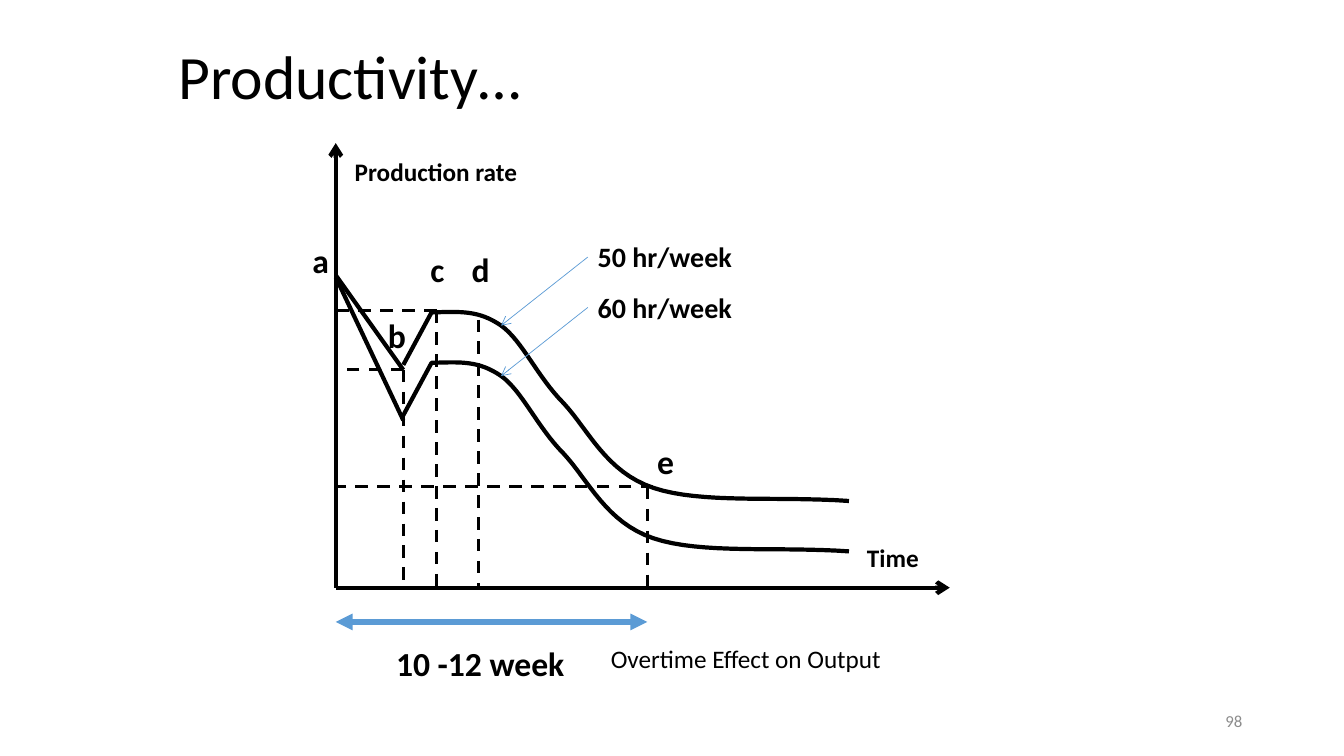
from dataclasses import dataclass

from pptx import Presentation
from pptx.dml.color import RGBColor
from pptx.enum.dml import MSO_LINE
from pptx.enum.shapes import MSO_CONNECTOR
from pptx.enum.text import MSO_ANCHOR as Anchor, PP_ALIGN as Align
from pptx.oxml.ns import qn
from pptx.util import Inches, Pt
from lxml.etree import SubElement


@dataclass(frozen=True)
class Theme:
    """Colours, font, type sizes and line widths of the slide."""
    font: str = "Calibri"
    ink: str = "000000"
    accent: str = "5B9BD5"
    muted: str = "8C8C8C"
    title: int = 44
    letter: int = 24
    series: int = 20
    body: int = 18
    number: int = 12
    heavy: float = 3
    guide: float = 2.25
    thin: float = 0.5
    span: float = 4


@dataclass(frozen=True)
class Box:
    """A region of the slide in inches."""
    left: float
    top: float
    width: float
    height: float

    def at(self, x, y):
        """Return the slide position of a point given within the box."""
        return self.left + x, self.top + y


THEME = Theme()
CURVE_START = (0.67, 2.2)
CURVE_KNEE = (0.95, 1.68)
CURVE_BENDS = [
    ((1.25, 1.67), (1.42, 1.66), (1.64, 1.81)),
    ((1.85, 1.96), (2.0, 2.32), (2.26, 2.58)),
    ((2.51, 2.85), (2.68, 3.26), (3.15, 3.42)),
    ((3.63, 3.58), (4.37, 3.5), (5.09, 3.55)),
]
BEND_STEPS = 16


def add_text(slide, text, box, size=THEME.body, color=THEME.ink, bold=False,
             align=Align.LEFT, anchor=Anchor.TOP, spacing=1.0):
    """Add a text box holding one formatted paragraph."""
    shape = slide.shapes.add_textbox(*map(Inches, (box.left, box.top, box.width, box.height)))
    frame = shape.text_frame
    frame.word_wrap = True
    frame.vertical_anchor = anchor
    paragraph = frame.paragraphs[0]
    paragraph.alignment = align
    paragraph.line_spacing = spacing
    run = paragraph.add_run()
    run.text = text
    run.font.name = THEME.font
    run.font.size = Pt(size)
    run.font.bold = bold
    run.font.color.rgb = RGBColor.from_string(color)
    return shape


def style_line(line, color, width):
    """Set the colour and width of a line."""
    line.color.rgb = RGBColor.from_string(color)
    line.width = Pt(width)


def add_line(slide, start, end, color=THEME.ink, width=THEME.heavy,
             dashed=False, head=None, tail=None):
    """Add a straight connector with optional dashes and arrowheads."""
    connector = slide.shapes.add_connector(
        MSO_CONNECTOR.STRAIGHT, *map(Inches, (*start, *end)))
    style_line(connector.line, color, width)
    if dashed:
        connector.line.dash_style = MSO_LINE.DASH
    properties = connector._element.spPr
    outline = properties.find(qn("a:ln"))
    for tag, kind in (("a:headEnd", head), ("a:tailEnd", tail)):
        if kind:
            SubElement(outline, qn(tag), type=kind)
    SubElement(properties, qn("a:effectLst"))
    return connector


def bezier_point(points, t):
    """Return the point at t on a cubic Bézier curve."""
    weights = ((1 - t) ** 3, 3 * t * (1 - t) ** 2, 3 * t * t * (1 - t), t ** 3)
    return tuple(sum(w * p[axis] for w, p in zip(weights, points)) for axis in (0, 1))


def curve_points():
    """Return the points of the output curve within the chart box."""
    points = [CURVE_START, CURVE_KNEE]
    for bend in CURVE_BENDS:
        controls = (points[-1], *bend)
        points += [bezier_point(controls, step / BEND_STEPS)
                   for step in range(1, BEND_STEPS + 1)]
    return points


def draw_axes(slide, box):
    """Draw both axes and their names."""
    origin = box.at(0, box.height)
    add_line(slide, origin, box.at(box.width, box.height), tail="arrow")
    add_line(slide, origin, box.at(0, 0), tail="arrow")
    add_text(slide, "Production rate", Box(*box.at(0.09, 0.08), 2.5, 0.4), bold=True)
    add_text(slide, "Time", Box(*box.at(5.17, 3.91), 0.92, 0.4), bold=True)


def draw_guides(slide, box):
    """Draw the dashed guides from the marked points to the axes."""
    style = {"width": THEME.guide, "dashed": True}
    for x, y in ((0.67, 2.25), (1, 1.66), (1.42, 1.75), (3.09, 3.41)):
        add_line(slide, box.at(x, y), box.at(x, box.height), **style)
    for x, y in ((0.67, 2.25), (1, 1.66), (3.15, 3.41)):
        add_line(slide, box.at(x, y), box.at(0, y), **style)


def draw_series(slide, box, name, drop, start):
    """Draw one output curve, lowered by drop, with its name and pointer."""
    add_line(slide, box.at(0, start), box.at(0.67, 2.25 + drop))
    points = [tuple(map(Inches, box.at(x, y + drop))) for x, y in curve_points()]
    builder = slide.shapes.build_freeform(*points[0])
    builder.add_line_segments(points[1:], close=False)
    curve = builder.convert_to_shape()
    curve.shadow.inherit = False
    curve.fill.background()
    style_line(curve.line, THEME.ink, THEME.heavy)
    label = add_text(slide, name, Box(*box.at(2.5, 0.91 + drop), 2, 0.44),
                     size=THEME.series, bold=True)
    pointer = add_line(slide, box.at(2.5, 1.13 + drop), box.at(1.64, 1.81 + drop),
                       color=THEME.accent, width=THEME.thin, tail="arrow")
    pointer.begin_connect(label, 1)


def draw_letters(slide, box):
    """Name the marked points of the curve."""
    for letter, x, y in (("a", -0.33, 0.91), ("b", 0.42, 1.66), ("c", 0.84, 1),
                         ("d", 1.25, 1), ("e", 3.09, 2.91)):
        add_text(slide, letter, Box(*box.at(x, y), 0.4, 0.5),
                 size=THEME.letter, bold=True)


def draw_chart(slide, box):
    """Draw the whole overtime diagram."""
    draw_axes(slide, box)
    draw_guides(slide, box)
    draw_series(slide, box, "50 hr/week", drop=0, start=1.31)
    draw_series(slide, box, "60 hr/week", drop=0.5, start=1.33)
    draw_letters(slide, box)


def draw_span(slide, box):
    """Draw the period arrow, its length and the caption."""
    add_line(slide, box.at(0, 0), box.at(3.09, 0), color=THEME.accent,
             width=THEME.span, head="triangle", tail="triangle")
    add_text(slide, "10 -12 week", Box(*box.at(0.5, 0.16), 2, 0.5),
             size=THEME.letter, bold=True)
    add_text(slide, "Overtime Effect on Output", Box(*box.at(2.63, 0.16), 3.44, 0.4))


def main():
    """Build the slide and save it."""
    presentation = Presentation()
    presentation.slide_width = Inches(13.33)
    presentation.slide_height = Inches(7.5)
    slide = presentation.slides.add_slide(presentation.slide_layouts[6])
    add_text(slide, "Productivity…", Box(1.67, 0.25, 10, 1.08), size=THEME.title,
             anchor=Anchor.MIDDLE, spacing=0.9)
    draw_chart(slide, Box(3.33, 1.42, 6.09, 4.41))
    draw_span(slide, Box(3.33, 6.17, 6.09, 0.66))
    add_text(slide, "98", Box(9.42, 6.95, 3, 0.4), size=THEME.number,
             color=THEME.muted, align=Align.RIGHT, anchor=Anchor.MIDDLE)
    presentation.save("out.pptx")


if __name__ == "__main__":
    main()
